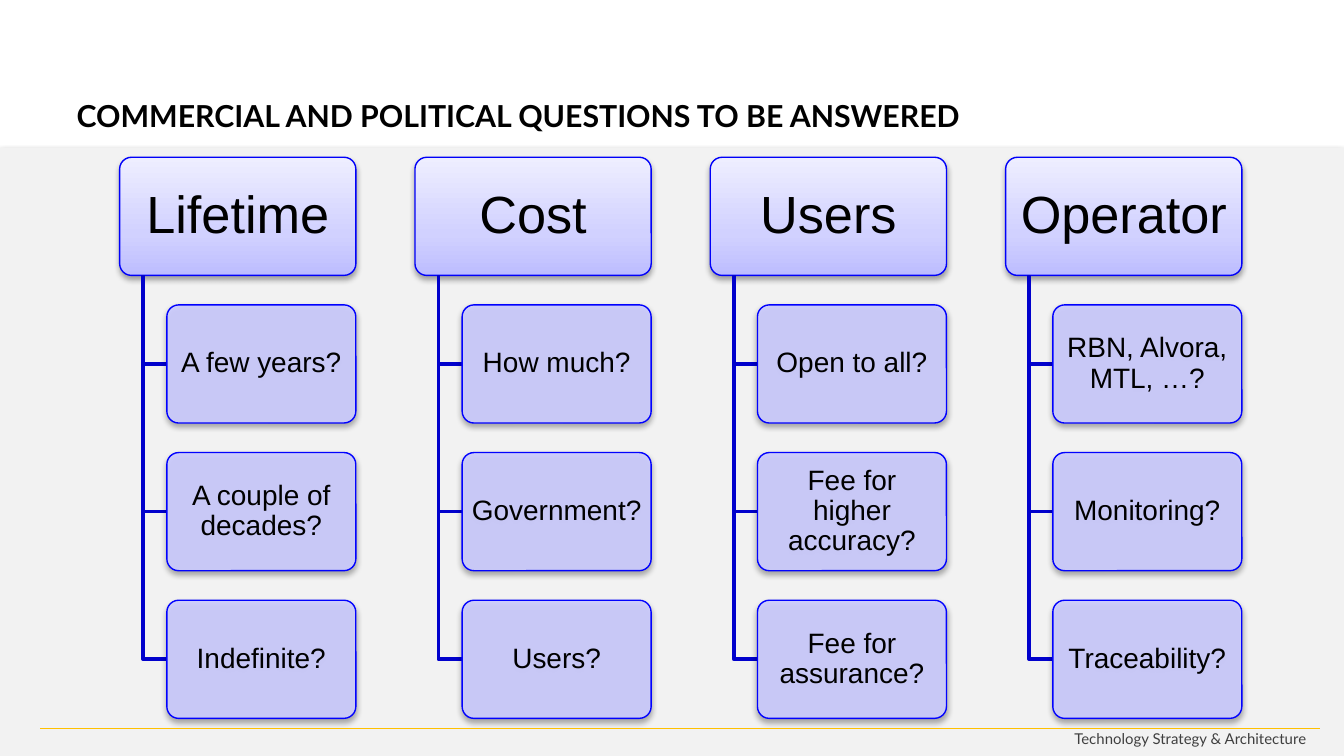
import copy
import lxml.etree
import pptx
import pptx.dml.color
import pptx.enum.shapes
import pptx.enum.text
import pptx.oxml
import pptx.oxml.ns
import pptx.util

inch = pptx.util.Inches
point = pptx.util.Pt
rgb = pptx.dml.color.RGBColor.from_string
kinds = pptx.enum.shapes.MSO_SHAPE
align = pptx.enum.text.PP_ALIGN
mid = pptx.enum.text.MSO_ANCHOR.MIDDLE
qn = pptx.oxml.ns.qn

hues = {
    "text": "000000", "foot": "3F3F3F", "band": "F2F2F2", "rule": "FFC000",
    "stem": "0101CC", "edge": "0101FF", "rim": "0000FA", "item": "CCCCFF",
    "low": "BDBDFF", "half": "D1D1FF", "high": "EEEEFF",
}
cols = {
    "Lifetime": ["A few years?", "A couple of decades?", "Indefinite?"],
    "Cost": ["How much?", "Government?", "Users?"],
    "Users": ["Open to all?", "Fee for higher accuracy?", "Fee for assurance?"],
    "Operator": ["RBN, Alvora, MTL, …?", "Monitoring?", "Traceability?"],
}

# Grid: every box is 4 units high, columns 10 units apart, rows 5 units apart
wide = 10
high = wide * 9 / 16
left, top = 0.89, 1.17
unit = (9.24 - left) / 38


def write(shape, words, form, font):
    """Fill the text frame; form holds frame values, font holds font values."""
    frame = shape.text_frame
    frame.word_wrap = True
    line = frame.paragraphs[0]
    line.text = words
    for key, value in form.items():
        setattr(line if key in ("alignment", "line_spacing") else frame, key, value)
    for key, value in font.items():
        if key == "color":
            line.font.color.rgb = rgb(hues[value])
        else:
            setattr(line.font, key, value)


def block(kind, x, y, w, h, fill, edge):
    """Add a filled preset shape with a soft shadow below it."""
    shape = page.shapes.add_shape(kind, inch(x), inch(y), inch(w), inch(h))
    shape.fill.solid()
    shape.fill.fore_color.rgb = rgb(hues[fill])
    shape.line.color.rgb = rgb(hues[edge])
    shape.line.width = point(0.75)
    shape.shadow.inherit = False
    glow = shape._element.spPr.find(qn("a:effectLst"))
    glow.append(pptx.oxml.parse_xml(
        f'<a:outerShdw {pptx.oxml.ns.nsdecls("a")} blurRad="40000" dist="23000"'
        ' dir="5400000" rotWithShape="0"><a:srgbClr val="000000">'
        '<a:alpha val="35000"/></a:srgbClr></a:outerShdw>'))
    return shape


deck = pptx.Presentation()
deck.slide_width, deck.slide_height = inch(wide), inch(high)
page = deck.slides.add_slide(deck.slide_layouts[5])

# Grey band
band = block(kinds.RECTANGLE, 0, 1.1, wide, high - 1.1, "band", "band")
band.line.fill.background()

# Footer and yellow rule
foot = page.shapes.add_textbox(inch(7.74), inch(5.38), inch(2.08), inch(0.24))
write(foot, "Technology Strategy & Architecture", {"alignment": align.RIGHT},
      {"name": "Lato", "size": point(8), "color": "foot"})
rule = page.shapes.add_connector(pptx.enum.shapes.MSO_CONNECTOR.STRAIGHT,
                                 inch(0.3), inch(5.42), inch(9.82), inch(5.42))
rule.line.color.rgb = rgb(hues["rule"])
rule.line.width = point(0.75)
lxml.etree.SubElement(rule._element.spPr, qn("a:effectLst"))

# Title
head = page.shapes.title
place = {"left": 0.47, "top": 0.74, "width": 9.18, "height": 0.24}
for key, value in place.items():
    setattr(head, key, inch(value))
write(head, "COMMERCIAL AND POLITICAL QUESTIONS TO BE ANSWERED",
      {"alignment": align.LEFT, "vertical_anchor": mid,
       "auto_size": pptx.enum.text.MSO_AUTO_SIZE.NONE},
      {"name": "Lato", "size": point(16.2), "bold": True, "color": "text"})

# Question trees
form = {"alignment": align.CENTER, "line_spacing": 0.9, "vertical_anchor": mid}
form.update({f"margin_{side}": inch(0.03)
             for side in ("left", "right", "top", "bottom")})
font = {"name": "Arial", "color": "text"}
for col, (name, items) in enumerate(cols.items()):
    x = left + 10 * unit * col

    # Header with a three-stop gradient
    root = block(kinds.ROUNDED_RECTANGLE, x, top, 8 * unit, 4 * unit, "low", "rim")
    root.adjustments[0] = 0.1
    root.fill.gradient()
    root.fill.gradient_angle = 90
    stops = root._element.spPr.find(".//" + qn("a:gsLst"))
    stops.insert(1, copy.deepcopy(stops[0]))
    for stop, hue, spot in zip(root.fill.gradient_stops,
                               ("low", "half", "high"), (0, 0.35, 1)):
        stop.color.rgb = rgb(hues[hue])
        stop.position = spot
    write(root, name, form, {**font, "size": point(28)})

    for row, words in enumerate(items, 1):
        y = top + 5 * unit * row

        # Elbow from the header down to the item
        stem, side, level = x + 0.8 * unit, x + 1.6 * unit, y + 2 * unit
        pen = page.shapes.build_freeform(inch(stem), inch(top + 4 * unit))
        pen.add_line_segments([(inch(stem), inch(level)),
                               (inch(side), inch(level))], close=False)
        elbow = pen.convert_to_shape()
        elbow.fill.background()
        elbow.line.color.rgb = rgb(hues["stem"])
        elbow.line.width = point(2)
        elbow.shadow.inherit = False

        # Item box, slightly see-through
        box = block(kinds.ROUNDED_RECTANGLE, side, y, 6.4 * unit, 4 * unit,
                    "item", "edge")
        box.adjustments[0] = 0.1
        tint = box._element.spPr.find(qn("a:solidFill"))[0]
        lxml.etree.SubElement(tint, qn("a:alpha"), val="90000")
        write(box, words, form, {**font, "size": point(15)})

deck.save("out.pptx")
